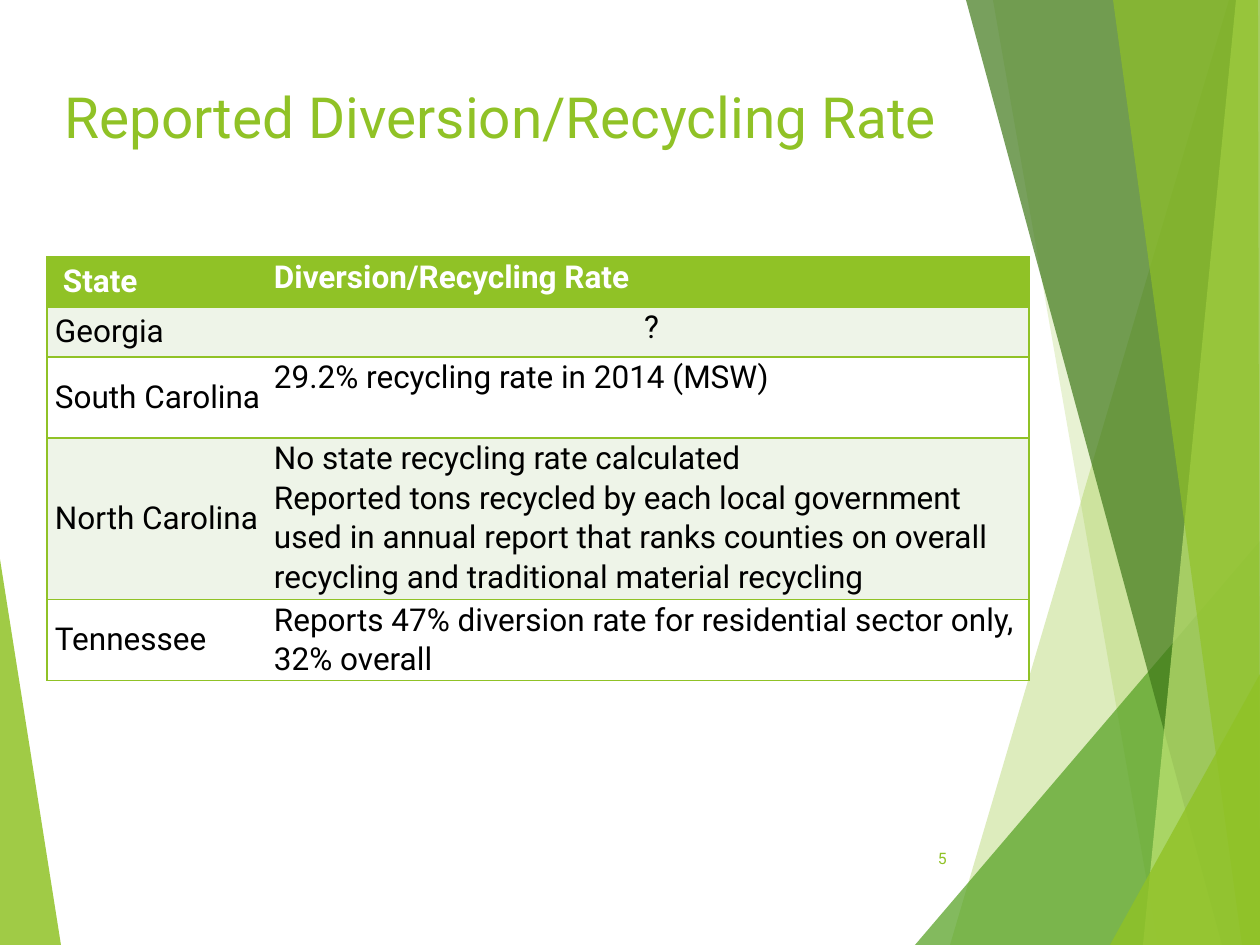
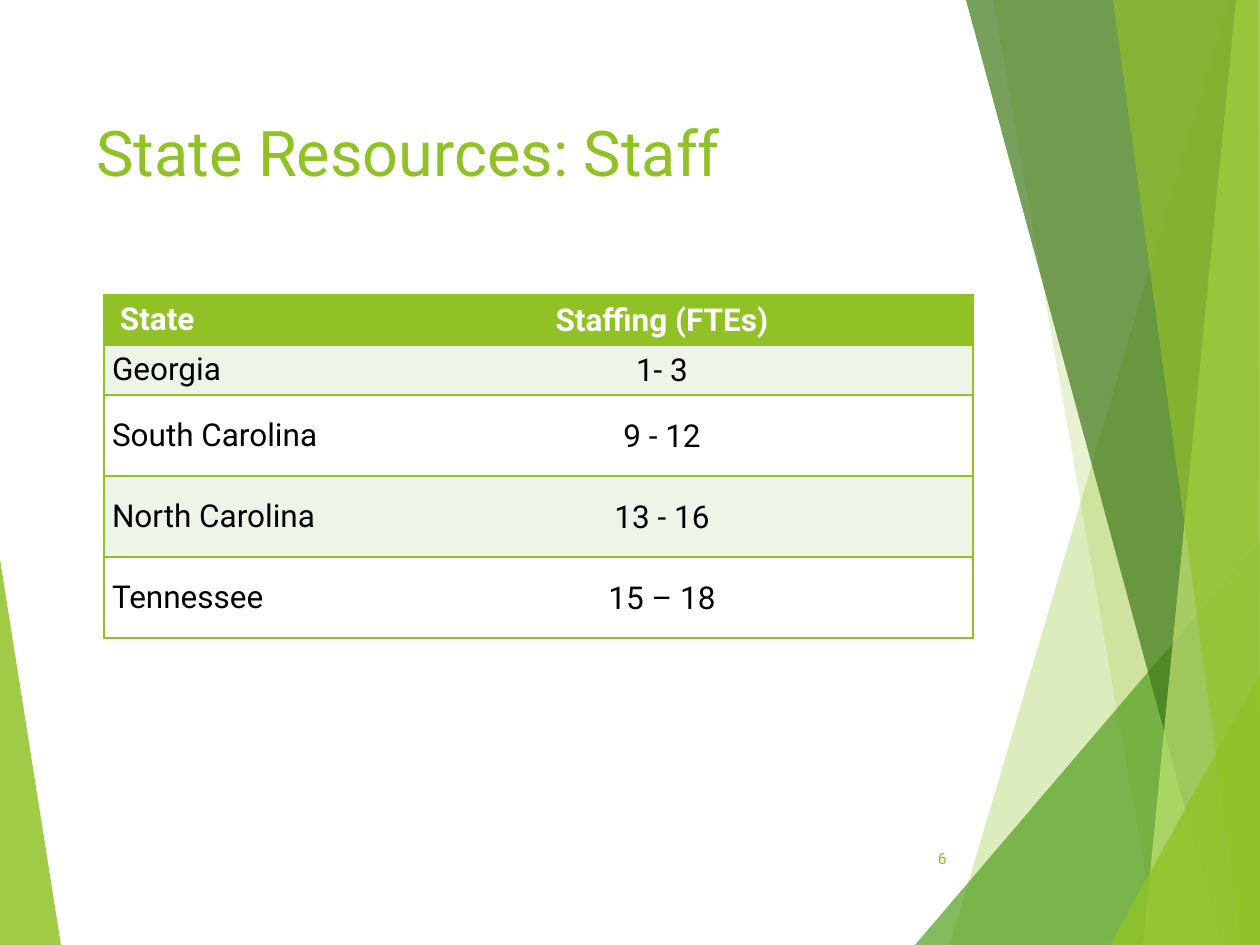
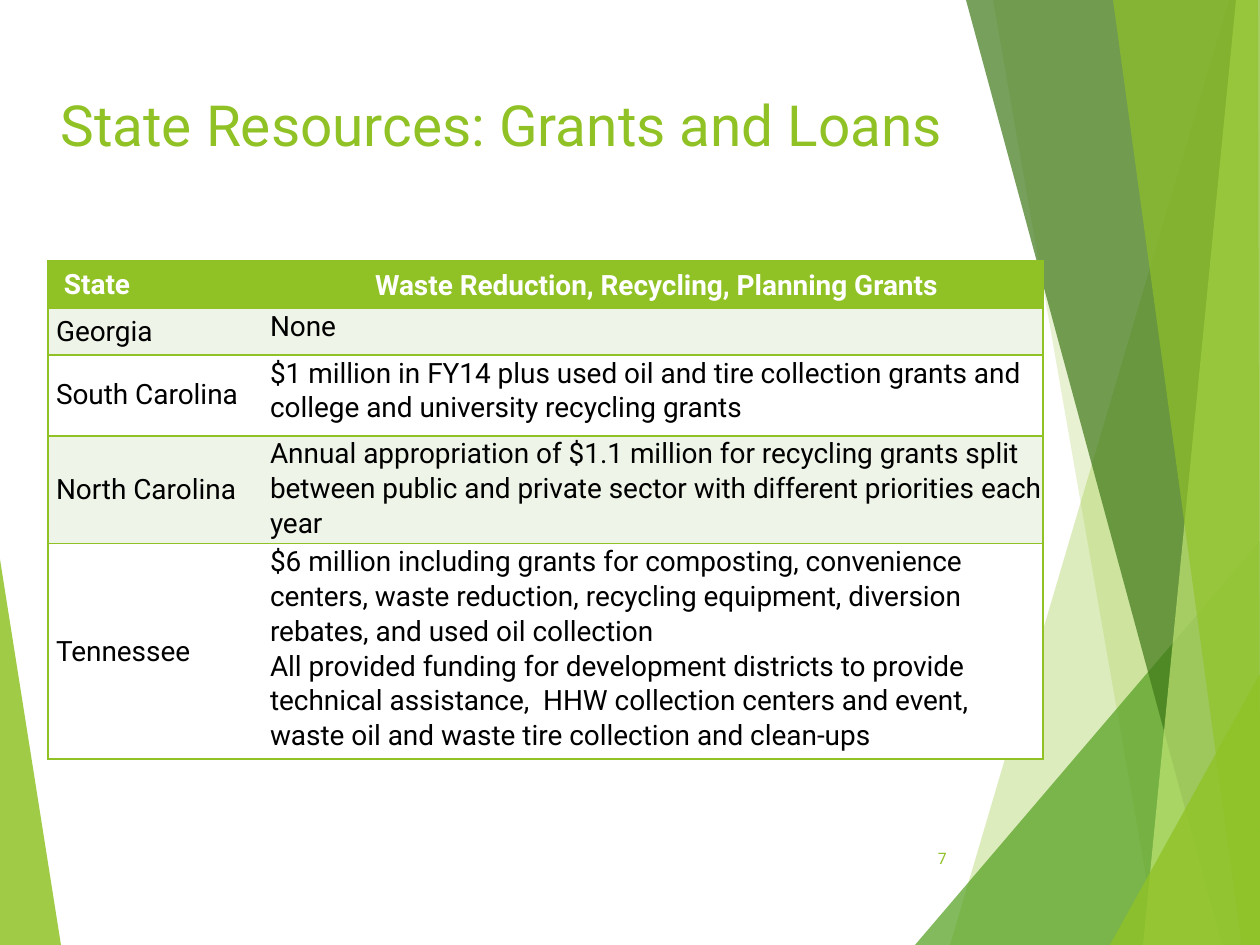
from dataclasses import dataclass

from lxml import etree
from pptx import Presentation
from pptx import util as u
from pptx.dml.color import RGBColor
from pptx.enum import shapes, text
from pptx.oxml import ns

PX = 914400 / 126
WIDTH, HEIGHT = 1260, 945
FIRST_NUMBER = 5


@dataclass(frozen=True)
class Theme:
    font: str = "Roboto"
    lime: str = "90C226"
    leaf: str = "54A021"
    forest: str = "3F7819"
    pale: str = "C0E474"
    tint: str = "EEF4E8"
    white: str = "FFFFFF"
    black: str = "000000"
    number_size: int = 9
    border: int = 1
    hairline: float = 0.75
    line_spacing: float = 1.07


THEME = Theme()

# Placement of the text in the second column: vertical anchor, alignment
TOP_LEFT = (text.MSO_ANCHOR.TOP, text.PP_ALIGN.LEFT)
TOP_CENTER = (text.MSO_ANCHOR.TOP, text.PP_ALIGN.CENTER)
MIDDLE = (text.MSO_ANCHOR.MIDDLE, text.PP_ALIGN.CENTER)
STATE_PLACE = (text.MSO_ANCHOR.MIDDLE, text.PP_ALIGN.LEFT)

SLIDES = [
    {
        "title": "Reported Diversion/Recycling Rate",
        "title_box": (52, 76, 907, 105), "title_size": 32.4,
        "table_at": (47, 257), "columns": (227, 755), "text_size": 18,
        "row_heights": (50, 50, 81, 158, 81),
        "rows": [
            ("State", ["Diversion/Recycling Rate"], TOP_LEFT),
            ("Georgia", ["?"], TOP_CENTER),
            ("South Carolina", ["29.2% recycling rate in 2014 (MSW)"], TOP_LEFT),
            ("North Carolina", [
                "No state recycling rate calculated",
                "Reported tons recycled by each local government used in annual "
                "report that ranks counties on overall recycling and traditional "
                "material recycling"], TOP_LEFT),
            ("Tennessee", ["Reports 47% diversion rate for residential sector only, "
                           "32% overall"], TOP_LEFT),
        ],
    },
    {
        "title": "State Resources: Staff",
        "title_box": (84, 107, 874, 105), "title_size": 36,
        "table_at": (104, 295), "columns": (247, 622), "text_size": 18,
        "row_heights": (50, 50, 81, 81, 81),
        "rows": [
            ("State", ["Staffing (FTEs)"], MIDDLE),
            ("Georgia", ["1- 3"], MIDDLE),
            ("South Carolina", ["9 - 12"], MIDDLE),
            ("North Carolina", ["13 - 16"], MIDDLE),
            ("Tennessee", ["15 – 18"], MIDDLE),
        ],
    },
    {
        "title": "State Resources: Grants and Loans",
        "title_box": (48, 84, 954, 105), "title_size": 32.4,
        "table_at": (48, 261), "columns": (222, 773), "text_size": 16,
        "row_heights": (47, 47, 81, 104, 208),
        "rows": [
            ("State", ["Waste Reduction, Recycling, Planning Grants"], MIDDLE),
            ("Georgia", ["None"], TOP_LEFT),
            ("South Carolina", [
                "$1 million in FY14 plus used oil and tire collection grants and "
                "college and university recycling grants"], TOP_LEFT),
            ("North Carolina", [
                "Annual appropriation of $1.1 million for recycling grants split "
                "between public and private sector with different priorities each "
                "year"], TOP_LEFT),
            ("Tennessee", [
                "$6 million including grants for composting, convenience centers, "
                "waste reduction, recycling equipment, diversion rebates, and used "
                "oil collection",
                "All provided funding for development districts to provide technical "
                "assistance,  HHW collection centers and event, waste oil and waste "
                "tire collection and clean-ups"], TOP_LEFT),
        ],
    },
]

RAYS = [((707, HEIGHT), (WIDTH, 576)), ((970, 0), (1139, HEIGHT))]

CORNER, TOP_CORNER = (WIDTH, HEIGHT), (WIDTH, 0)
# Colour, opacity in percent, outline
SHARDS = [
    (THEME.lime, 85, [(0, 559), (61, HEIGHT), (0, HEIGHT)]),
    (THEME.lime, 30, [(1229, 0), (950, HEIGHT), CORNER, TOP_CORNER]),
    (THEME.lime, 20, [(993, 0), (1158, HEIGHT), CORNER, TOP_CORNER]),
    (THEME.leaf, 72, [(915, HEIGHT), (WIDTH, 541), CORNER]),
    (THEME.forest, 70, [(966, 0), (1222, HEIGHT), CORNER, TOP_CORNER]),
    (THEME.pale, 70, [(1236, 0), (1143, HEIGHT), CORNER, TOP_CORNER]),
    (THEME.lime, 65, [(1113, 0), (1242, HEIGHT), CORNER, (1258, 0)]),
    (THEME.lime, 80, [(1110, HEIGHT), (WIDTH, 674), CORNER]),
]
NUMBER_BOX = (888, 833, 71, 50)


def emu(*lengths):
    return [u.Emu(round(length * PX)) for length in lengths]


def set_all(target, values):
    for name, value in values.items():
        setattr(target, name, value)


def paint(fill, color):
    fill.solid()
    fill.fore_color.rgb = RGBColor.from_string(color)


def write(frame, lines, size, color, bold=False, **paragraph_format):
    for index, line in enumerate(lines):
        para = frame.add_paragraph() if index else frame.paragraphs[0]
        set_all(para, paragraph_format)
        span = para.add_run()
        span.text = line
        set_all(span.font, {"name": THEME.font, "size": u.Pt(size), "bold": bold})
        span.font.color.rgb = RGBColor.from_string(color)


def add_text(page, area, line, size, anchor, align):
    frame = page.shapes.add_textbox(*emu(*area)).text_frame
    set_all(frame, {"word_wrap": True, "vertical_anchor": anchor})
    write(frame, [line], size, THEME.lime, alignment=align)


def draw_backdrop(page, layout):
    """Draw the rays and shards, then move them to the layout all slides use."""
    parts = []
    for start, end in RAYS:
        ray = page.shapes.add_connector(
            shapes.MSO_CONNECTOR.STRAIGHT, *emu(*start, *end))
        paint(ray.line.fill, THEME.white)
        ray.line.width = u.Pt(THEME.hairline)
        etree.SubElement(ray.element.spPr, ns.qn("a:effectLst"))
        parts.append(ray)
    for color, opacity, outline in SHARDS:
        builder = page.shapes.build_freeform(*outline[0], scale=PX)
        builder.add_line_segments(outline[1:], close=True)
        shard = builder.convert_to_shape()
        shard.shadow.inherit = False
        shard.line.fill.background()
        paint(shard.fill, color)
        tone = shard.element.spPr.find(".//" + ns.qn("a:srgbClr"))
        etree.SubElement(tone, ns.qn("a:alpha"), val=str(opacity * 1000))
        parts.append(shard)
    for holder in list(layout.placeholders):
        holder.element.getparent().remove(holder.element)
    for part in parts:
        layout.shapes.element.append(part.element)


def add_borders(cell, visible):
    """Rule the sides named in visible and clear the others."""
    properties = cell._tc.get_or_add_tcPr()
    for side in "LRTB":
        line = etree.SubElement(properties, ns.qn("a:ln" + side),
                                w=str(u.Pt(THEME.border)))
        if side in visible:
            fill = etree.SubElement(line, ns.qn("a:solidFill"))
            etree.SubElement(fill, ns.qn("a:srgbClr"), val=THEME.lime)
        else:
            etree.SubElement(line, ns.qn("a:noFill"))


def fill_cell(cell, lines, place, margins, size, row, sides, spacing):
    header = row == 0
    add_borders(cell, sides)
    paint(cell.fill, THEME.lime if header else THEME.tint if row % 2 else THEME.white)
    anchor, align = place
    names = ("margin_left", "margin_top", "margin_right", "margin_bottom")
    set_all(cell, dict(zip(names, emu(*margins)), vertical_anchor=anchor))
    write(cell.text_frame, lines, size, THEME.white if header else THEME.black,
          header, alignment=align, line_spacing=spacing)


def add_state_table(page, content):
    columns, heights, size = (
        content[key] for key in ("columns", "row_heights", "text_size"))
    area = (*content["table_at"], sum(columns), sum(heights))
    table = page.shapes.add_table(len(heights), len(columns), *emu(*area)).table
    for column, width in zip(table.columns, emu(*columns)):
        column.width = width
    for row, height in zip(table.rows, emu(*heights)):
        row.height = height
    for row, (state, lines, place) in enumerate(content["rows"]):
        indent = 8 if row else 16
        fill_cell(table.cell(row, 0), [state], STATE_PLACE, (indent, 6, 8, 6),
                  size, row, "LTB", 1.0)
        fill_cell(table.cell(row, 1), lines, place, (0, 0, 0, 0),
                  size, row, "RTB", THEME.line_spacing)


def main():
    deck = Presentation()
    deck.slide_width, deck.slide_height = emu(WIDTH, HEIGHT)
    blank = deck.slide_layouts[6]
    for number, content in enumerate(SLIDES, FIRST_NUMBER):
        page = deck.slides.add_slide(blank)
        if number == FIRST_NUMBER:
            draw_backdrop(page, blank)
        add_text(page, content["title_box"], content["title"],
                 content["title_size"], *TOP_LEFT)
        add_state_table(page, content)
        add_text(page, NUMBER_BOX, str(number), THEME.number_size,
                 text.MSO_ANCHOR.MIDDLE, text.PP_ALIGN.RIGHT)
    deck.save("out.pptx")


if __name__ == "__main__":
    main()
